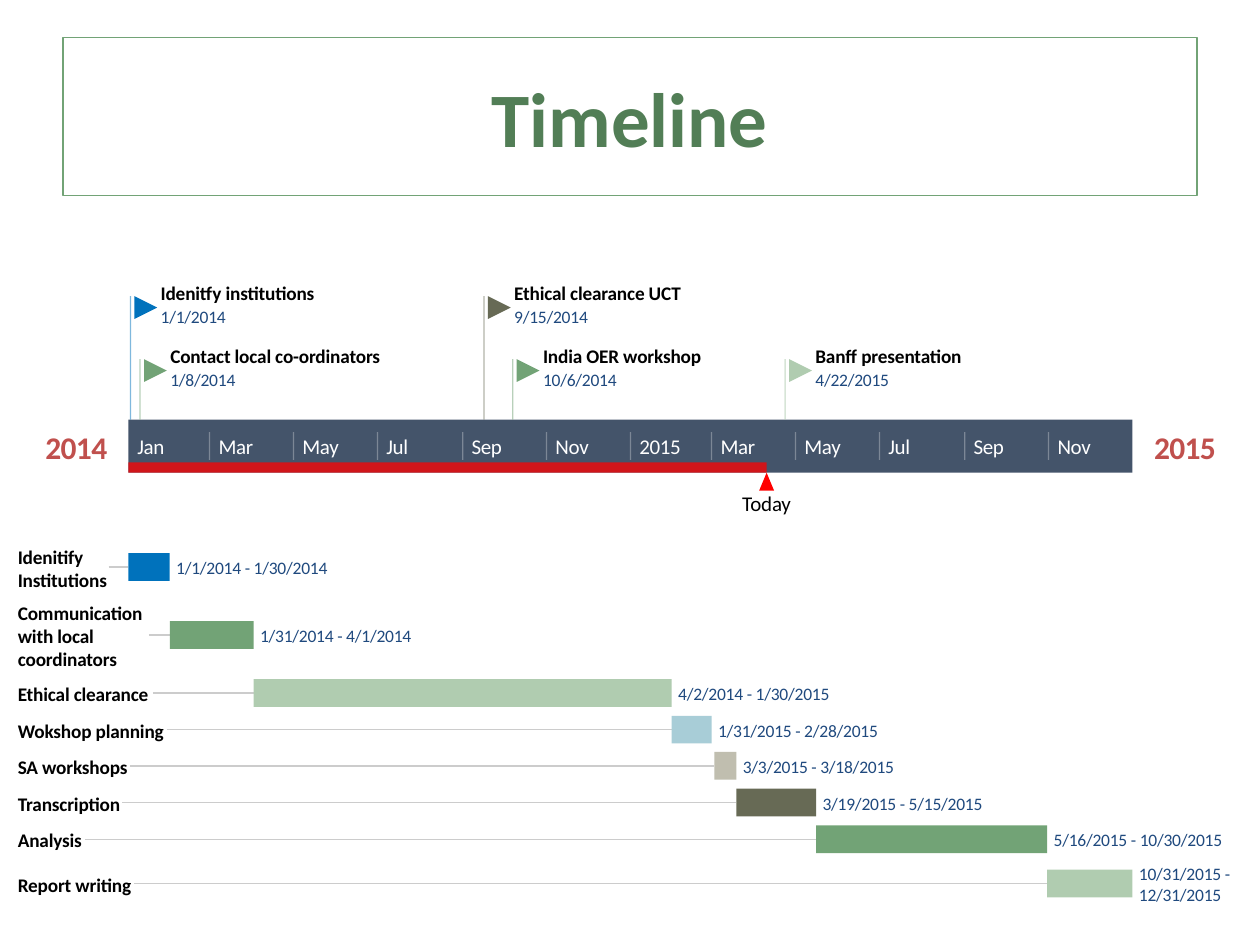
from lxml import etree
from pptx import Presentation
from pptx.dml.color import RGBColor
from pptx.enum.shapes import MSO_CONNECTOR, MSO_SHAPE
from pptx.enum.text import MSO_ANCHOR, PP_ALIGN
from pptx.oxml.ns import qn
from pptx.util import Cm, Pt

LEFT, CENTER = PP_ALIGN.LEFT, PP_ALIGN.CENTER
MIDDLE = MSO_ANCHOR.MIDDLE
RECTANGLE, TRIANGLE = MSO_SHAPE.RECTANGLE, MSO_SHAPE.ISOSCELES_TRIANGLE
FLAG = MSO_SHAPE.FLOWCHART_MERGE
STRAIGHT = MSO_CONNECTOR.STRAIGHT

FONT = "Calibri"
BLUE, GREEN, PALE_GREEN, OLIVE = "0072BC", "72A376", "B0CCB0", "676A55"
BLACK, WHITE, RED, NAVY = "000000", "FFFFFF", "FF0000", "1F497E"

# Milestones: name, name width, date, flag colour, flag top, pole colour
HIGH, LOW = 5.97, 7.24
MILESTONES = [
    ("Idenitfy institutions", 3.18, "1/1/2014", BLUE, HIGH),
    ("Contact local co-ordinators", 4.34, "1/8/2014", GREEN, LOW),
    ("Ethical clearance UCT", 3.45, "9/15/2014", OLIVE, HIGH),
    ("India OER workshop", 3.28, "10/6/2014", GREEN, LOW),
    ("Banff presentation", 3.0, "4/22/2015", PALE_GREEN, LOW),
]
# Tasks: name, name width, lines in name, start, end, colour, row centre
TASKS = [
    ("Idenitify Institutions", 1.83, 2, "1/1/2014", "1/30/2014", BLUE, 11.43),
    ("Communication with local coordinators", 2.64, 3, "1/31/2014", "4/1/2014", GREEN, 12.8),
    ("Ethical clearance", 2.72, 1, "4/2/2014", "1/30/2015", PALE_GREEN, 13.97),
    ("Wokshop planning", 3.0, 1, "1/31/2015", "2/28/2015", "A8CDD7", 14.71),
    ("SA workshops", 2.26, 1, "3/3/2015", "3/18/2015", "C0BEAF", 15.44),
    ("Transcription", 2.11, 1, "3/19/2015", "5/15/2015", OLIVE, 16.18),
    ("Analysis", 1.35, 1, "5/16/2015", "10/30/2015", GREEN, 16.92),
    ("Report writing", 2.34, 1, "10/31/2015", "12/31/2015", PALE_GREEN, 17.81),
]
MONTHS = ["Jan", "Mar", "May", "Jul", "Sep", "Nov",
          "2015", "Mar", "May", "Jul", "Sep", "Nov"]
MONTH_LENGTHS = [31, 28, 31, 30, 31, 30, 31, 31, 30, 31, 30, 31]
TODAY = "4/10/2015"

AXIS_LEFT, AXIS_TOP, AXIS_WIDTH, AXIS_HEIGHT = 2.59, 8.46, 20.24, 1.07
AXIS_BOTTOM = AXIS_TOP + AXIS_HEIGHT
TOTAL_DAYS = 730
NAME_LEFT, BAR_HEIGHT, LINE_HEIGHT = 0.36, 0.56, 0.47
SLIDE_RIGHT = 25.0


def date_x(date, extra_days=0):
    """Horizontal place of a month/day/year date on the time axis, in cm."""
    month, day, year = (int(part) for part in date.split("/"))
    days = (year - 2014) * 365 + sum(MONTH_LENGTHS[:month - 1]) + day - 1
    return AXIS_LEFT + AXIS_WIDTH * (days + extra_days) / TOTAL_DAYS


def date_width(text):
    return sum(0.18 if letter.isdigit() else 0.13 for letter in text)


def color(hex_string):
    return RGBColor.from_string(hex_string)


def set_opacity(fill_owner, percent):
    for node in fill_owner.iter(qn("a:srgbClr")):
        etree.SubElement(node, qn("a:alpha"), val=str(percent * 1000))


def add_block(kind, left, top, width, height, fill, opacity=100, rotation=0):
    shape = slide.shapes.add_shape(kind, Cm(left), Cm(top), Cm(width), Cm(height))
    shape.shadow.inherit = False
    shape.fill.solid()
    shape.fill.fore_color.rgb = color(fill)
    shape.line.fill.background()
    shape.rotation = rotation
    if opacity < 100:
        set_opacity(shape.element.spPr, opacity)


def add_line(x1, y1, x2, y2, line_color, opacity=100):
    line = slide.shapes.add_connector(STRAIGHT, Cm(x1), Cm(y1), Cm(x2), Cm(y2))
    line.line.color.rgb = color(line_color)
    line.line.width = Pt(0.75)
    if opacity < 100:
        set_opacity(line.element.spPr, opacity)
    etree.SubElement(line.element.spPr, qn("a:effectLst"))


def write(frame, text, size, text_color, bold=False, align=LEFT, spacing=0):
    frame.vertical_anchor = MIDDLE
    paragraph = frame.paragraphs[0]
    paragraph.alignment = align
    run = paragraph.add_run()
    run.text = text
    run.font.name = FONT
    run.font.size = Pt(size)
    run.font.bold = bold
    run.font.color.rgb = color(text_color)
    if spacing:
        run.font._element.set("spc", str(spacing))


def add_text(text, left, middle, width, height, size=10, text_color=NAVY,
             wrap=False, spacing=-10, **text_format):
    """Text box without margins, centred vertically on middle."""
    box = slide.shapes.add_textbox(Cm(left), Cm(middle - height / 2), Cm(width), Cm(height))
    frame = box.text_frame
    frame.margin_left = frame.margin_right = frame.margin_top = frame.margin_bottom = 0
    frame.word_wrap = wrap
    write(frame, text, size, text_color, spacing=spacing, **text_format)


def add_title():
    title = slide.shapes.title
    title.left, title.top, title.width, title.height = Cm(1.27), Cm(0.76), Cm(22.86), Cm(3.18)
    title.line.color.rgb = color(GREEN)
    title.line.width = Pt(0.75)
    write(title.text_frame, "Timeline", 44, "527E56", bold=True, align=CENTER)


def add_axis():
    axis_middle = 9.0
    for year, left in (("2014", 0.89), ("2015", 23.24)):
        add_text(year, left, axis_middle, 1.3, 0.78, size=18, text_color="C0504D",
                 bold=True, align=CENTER, spacing=-40)
    add_block(RECTANGLE, AXIS_LEFT, AXIS_TOP, AXIS_WIDTH, AXIS_HEIGHT, "44546A")
    today = date_x(TODAY)
    add_block(RECTANGLE, AXIS_LEFT, AXIS_BOTTOM - 0.21, today - AXIS_LEFT, 0.21, RED, opacity=75)
    add_block(TRIANGLE, today - 0.15, AXIS_BOTTOM, 0.3, 0.36, RED)
    add_text("Today", today - 0.51, 10.14, 1.02, 0.52, size=12, text_color=BLACK, align=CENTER)
    for index, month in enumerate(MONTHS):
        year, half = divmod(index, 6)
        x = date_x(f"{2 * half + 1}/1/{2014 + year}")
        if index:
            add_line(x, 8.71, x, 9.27, WHITE, opacity=30)
        add_text(month, x + 0.18, axis_middle, 0.9, 0.52, size=12, text_color=WHITE, spacing=-20)


def add_milestone(name, width, date, flag_color, top):
    pole = date_x(date) + 0.04
    text_left = pole + 0.61
    add_line(pole, top, pole, AXIS_TOP, flag_color, opacity=50)
    add_block(FLAG, pole + 0.08, top, 0.46, 0.46, flag_color, rotation=270)
    add_text(name, text_left, top - 0.06, width, LINE_HEIGHT, size=11, text_color=BLACK, bold=True)
    add_text(date, text_left, top + 0.42, date_width(date), 0.43)


def add_task(name, width, line_count, start, end, bar_color, middle):
    left, right = date_x(start), date_x(end, extra_days=1)
    add_line(NAME_LEFT + width, middle, left, middle, "CCCCCC")
    add_block(RECTANGLE, left, middle - BAR_HEIGHT / 2, right - left, BAR_HEIGHT, bar_color)
    add_text(name, NAME_LEFT, middle + 0.02, width, LINE_HEIGHT * line_count, size=11,
             text_color=BLACK, bold=True, wrap=line_count > 1)
    period = f"{start} - {end}"
    period_left = right + 0.13
    period_width = date_width(period)
    too_wide = period_left + period_width > SLIDE_RIGHT
    add_text(period, period_left, middle + 0.01, 1.98 if too_wide else period_width,
             0.86 if too_wide else 0.43, wrap=too_wide)


presentation = Presentation()
presentation.slide_width, presentation.slide_height = Cm(25.4), Cm(19.05)
slide = presentation.slides.add_slide(presentation.slide_layouts[5])
add_title()
add_axis()
for milestone in MILESTONES:
    add_milestone(*milestone)
for task in TASKS:
    add_task(*task)
presentation.save("out.pptx")
